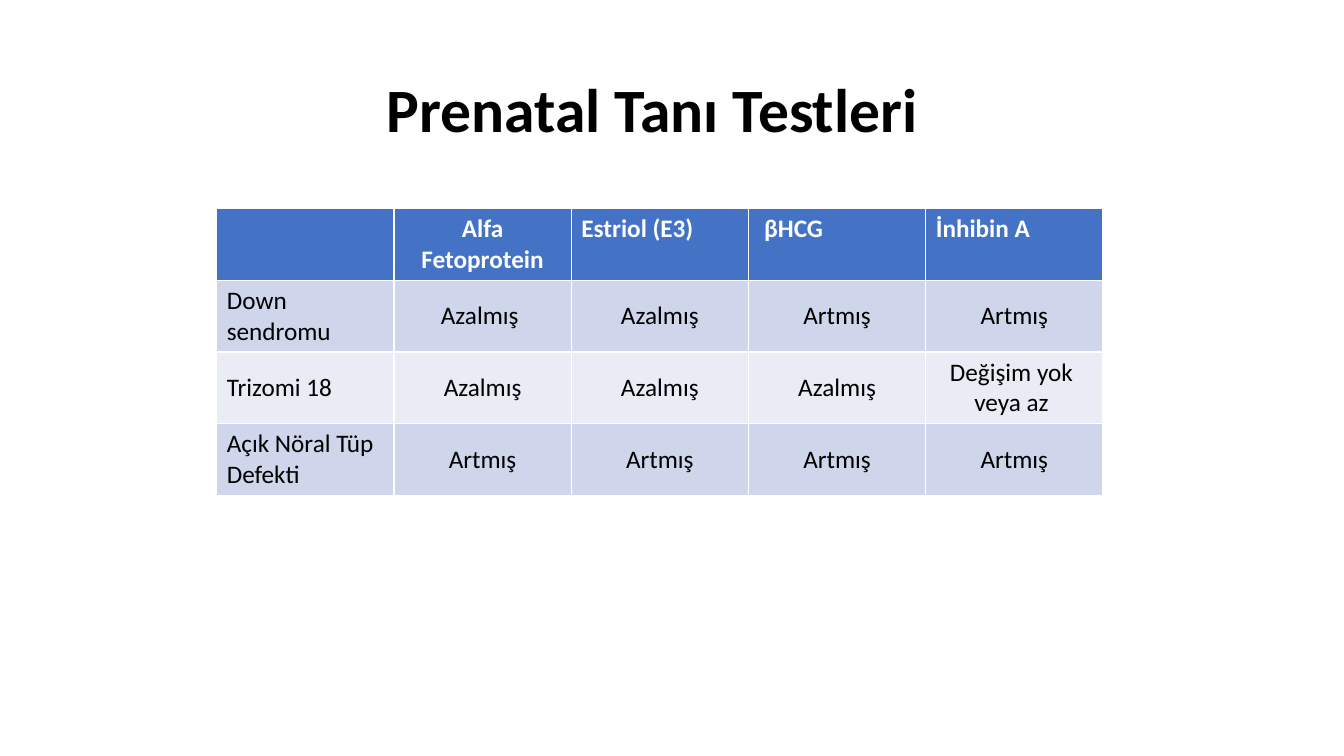
import pptx
import pptx.util
import pptx.dml.color
import pptx.enum.text

Inches, Pt = pptx.util.Inches, pptx.util.Pt
RGBColor = pptx.dml.color.RGBColor
ALIGN, ANCHOR = pptx.enum.text.PP_ALIGN, pptx.enum.text.MSO_ANCHOR

WHITE = RGBColor(0xFF, 0xFF, 0xFF)
BLACK = RGBColor(0x00, 0x00, 0x00)
HEADER = RGBColor(0x44, 0x72, 0xC4)
BANDS = (RGBColor(0xE9, 0xEB, 0xF5), RGBColor(0xCF, 0xD5, 0xEA))
FONT = "Calibri"

RESULTS = [
    ["", "Alfa Fetoprotein", "Estriol (E3)", " βHCG", "İnhibin A"],
    ["Down sendromu", "Azalmış ", "Azalmış", "Artmış", "Artmış"],
    ["Trizomi 18", "Azalmış", "Azalmış", "Azalmış", "Değişim yok \nveya az "],
    ["Açık Nöral Tüp Defekti", "Artmış", "Artmış", "Artmış", "Artmış"],
]
# Cells whose text sits at the top, as (row, column)
TOP_CELLS = {(0, 0), (0, 2), (0, 3), (0, 4), (1, 0), (3, 0)}


def style_paragraph(p, size, color, bold, align):
    p.font.name = FONT
    p.font.size = Pt(size)
    p.font.color.rgb = color
    p.font.bold = bold
    p.alignment = align


def add_title(slide, text, left, top, width, height):
    sp = slide.shapes.title
    sp.left, sp.top, sp.width, sp.height = map(Inches, (left, top, width, height))
    tf = sp.text_frame
    tf.text = text
    tf.word_wrap = True
    tf.vertical_anchor = ANCHOR.MIDDLE
    p = tf.paragraphs[0]
    style_paragraph(p, 44, BLACK, True, ALIGN.CENTER)
    p.line_spacing = 0.9


def add_results_table(slide, rows, left, top, width, height):
    # The default table style draws the white cell borders
    table = slide.shapes.add_table(
        len(rows), len(rows[0]), *map(Inches, (left, top, width, height))).table
    for i, row in enumerate(rows):
        for j, text in enumerate(row):
            cell = table.cell(i, j)
            cell.fill.solid()
            cell.fill.fore_color.rgb = BANDS[i % 2] if i else HEADER
            at_top = (i, j) in TOP_CELLS
            cell.vertical_anchor = ANCHOR.TOP if at_top else ANCHOR.MIDDLE
            align = ALIGN.LEFT if at_top or j == 0 else ALIGN.CENTER
            cell.text = text
            for p in cell.text_frame.paragraphs:
                style_paragraph(p, 18, BLACK if i else WHITE, i == 0, align)


def main():
    prs = pptx.Presentation()
    prs.slide_width, prs.slide_height = Inches(13.33), Inches(7.5)
    slide = prs.slides.add_slide(prs.slide_layouts[5])
    add_results_table(slide, RESULTS, 2.15, 2.07, 8.79, 2.8)
    add_title(slide, "Prenatal Tanı Testleri ", 0.79, 0.39, 11.5, 1.45)
    prs.save("out.pptx")


if __name__ == "__main__":
    main()
